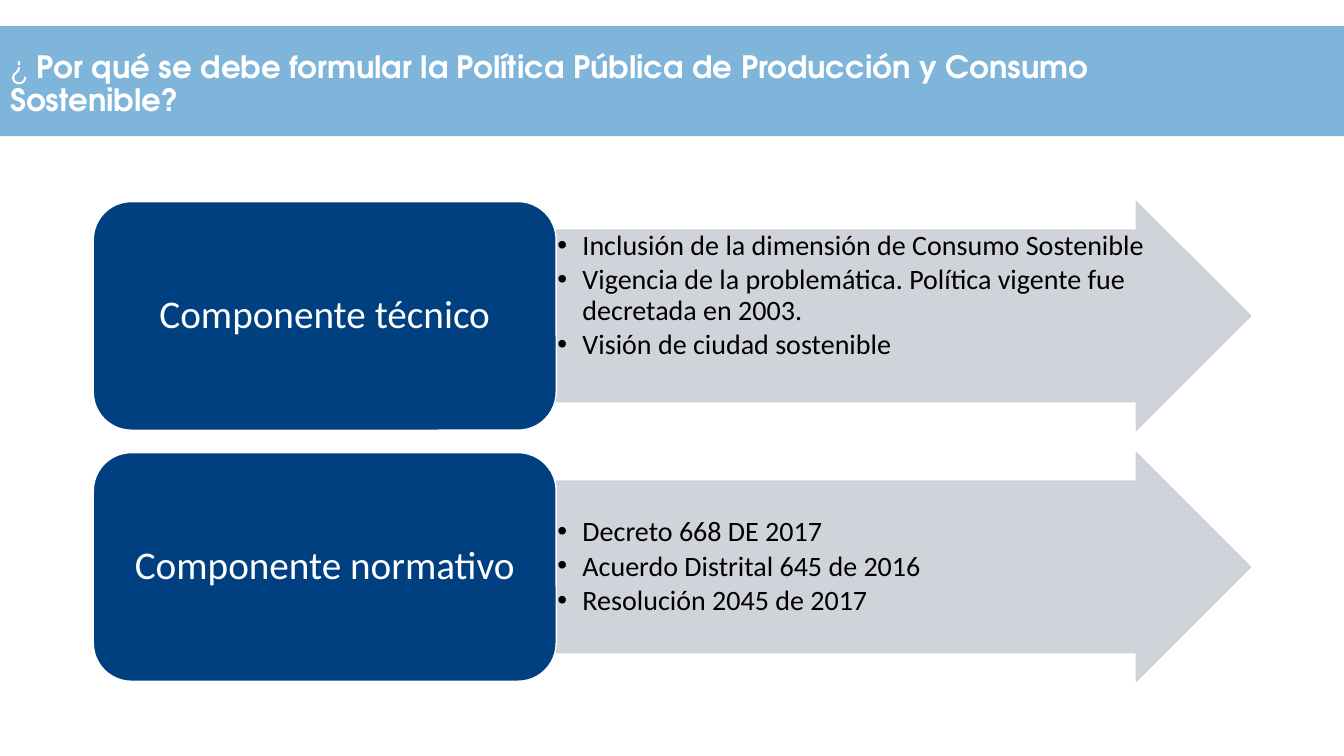
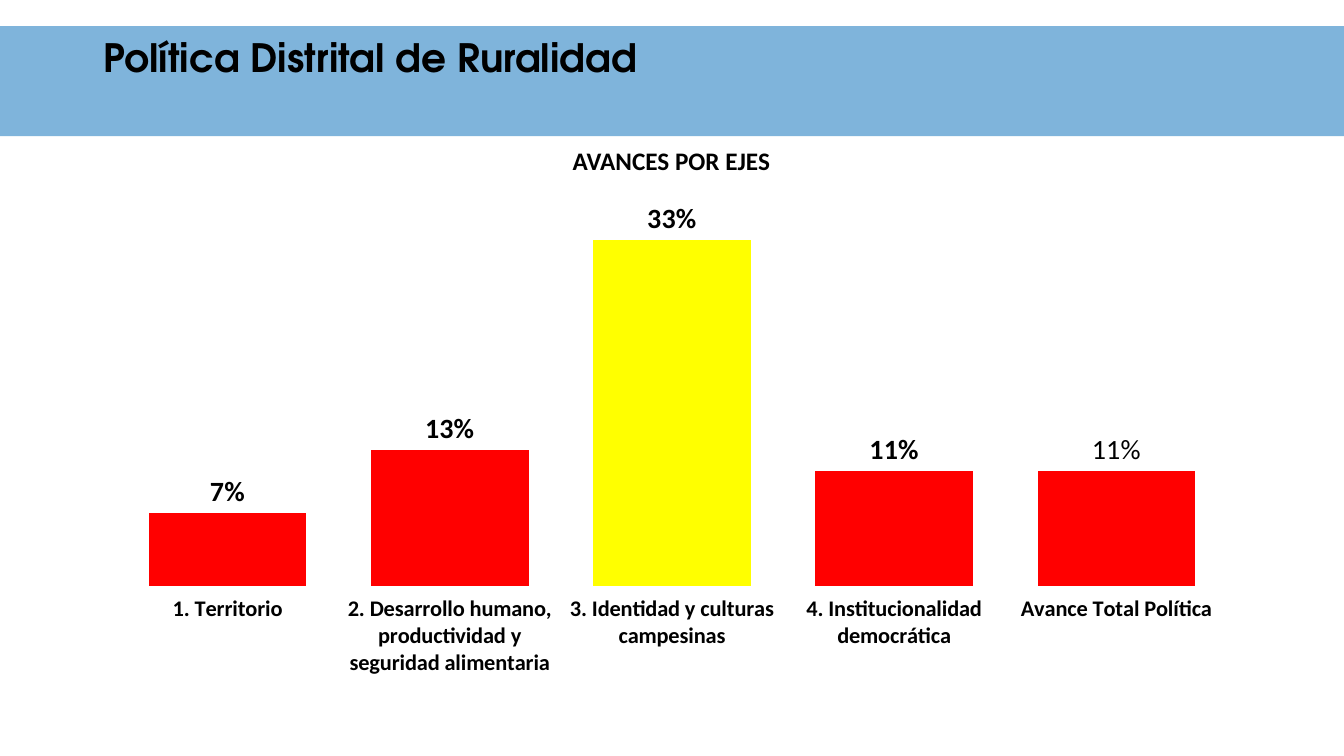
from lxml import etree
from pptx import Presentation
from pptx.chart.data import CategoryChartData
from pptx.dml.color import RGBColor
from pptx.enum.chart import XL_CHART_TYPE as ChartType
from pptx.enum.chart import XL_LABEL_POSITION as LabelPosition
from pptx.enum.chart import XL_TICK_LABEL_POSITION as TickLabels
from pptx.enum.chart import XL_TICK_MARK as TickMark
from pptx.enum.shapes import MSO_SHAPE as Preset
from pptx.enum.text import MSO_ANCHOR as Anchor
from pptx.enum.text import MSO_AUTO_SIZE as AutoSize
from pptx.enum.text import PP_ALIGN as Align
from pptx.oxml.ns import qn
from pptx.util import Inches, Pt

BAND_BLUE = RGBColor(0x1C, 0x7A, 0xBF)
NAVY = RGBColor(0x00, 0x40, 0x80)
ARROW_GRAY = RGBColor(0xCC, 0xCF, 0xD8)
RED = RGBColor(0xFF, 0x00, 0x00)
YELLOW = RGBColor(0xFF, 0xFF, 0x00)
BLACK = RGBColor(0x00, 0x00, 0x00)
WHITE = RGBColor(0xFF, 0xFF, 0xFF)

TITLE_FONT = "TeX Gyre Adventor"
BODY_FONT = "Calibri"
COLUMNS, ROWS = 144, 81
MARGIN = 10
CONTENT_WIDTH = COLUMNS - 2 * MARGIN
CONTENT_TOP = 21.6


def set_alpha(shape, percent):
    """Make every solid colour of the shape, fill and line, translucent."""
    for color in shape.element.spPr.iter(qn("a:srgbClr")):
        etree.SubElement(color, qn("a:alpha"), val=str(percent * 1000))


def style_font(font, size, color, bold=False, name=BODY_FONT):
    font.name, font.size, font.bold = name, Pt(size), bold
    font.color.rgb = color


class Slides:
    def __init__(self):
        self.deck = Presentation()
        self.deck.slide_width, self.deck.slide_height = Inches(13.33), Inches(7.5)
        self.layout = self.deck.slide_layouts[5]
        self.page = None

    def area(self, column, row, columns, rows):
        """Turn grid units into left, top, width and height."""
        unit_x = self.deck.slide_width / COLUMNS
        unit_y = self.deck.slide_height / ROWS
        return (int(column * unit_x), int(row * unit_y),
                int(columns * unit_x), int(rows * unit_y))

    def add_page(self):
        first = self.page is None
        self.page = self.deck.slides.add_slide(self.layout)
        if first:
            self.add_layout_band()

    def add_layout_band(self):
        """Draw the title band once and move it to the layout, behind its title."""
        band = self.shape(Preset.RECTANGLE, (0, 2.8, COLUMNS, 11.8), BAND_BLUE)
        set_alpha(band, 56)
        band.element.xpath(".//p:cNvPr")[0].set("id", "20")
        self.layout.placeholders[0].element.addprevious(band.element)

    def title(self, spans, area, size, color, anchor=Anchor.MIDDLE):
        """Fill the title with (text, bold) spans."""
        box = self.page.shapes.title
        box.left, box.top, box.width, box.height = self.area(*area)
        frame = box.text_frame
        frame.word_wrap, frame.auto_size = True, AutoSize.NONE
        frame.vertical_anchor = anchor
        para = frame.paragraphs[0]
        para.alignment, para.line_spacing = Align.LEFT, 0.9
        for text, bold in spans:
            span = para.add_run()
            span.text = text
            style_font(span.font, size, color, bold, TITLE_FONT)

    def shape(self, preset, area, fill, line=None):
        shape = self.page.shapes.add_shape(preset, *self.area(*area))
        shape.shadow.inherit = False
        shape.fill.solid()
        shape.fill.fore_color.rgb = fill
        if line is None:
            shape.line.fill.background()
        else:
            shape.line.color.rgb = line
            shape.line.width = Pt(1)
        return shape

    def arrow(self, items, area, anchor):
        arrow = self.shape(Preset.RIGHT_ARROW, area, ARROW_GRAY, ARROW_GRAY)
        arrow.adjustments[0], arrow.adjustments[1] = 0.75, 0.5
        set_alpha(arrow, 90)
        frame = arrow.text_frame
        frame.margin_left = frame.margin_right = Inches(0.01)
        frame.margin_top = frame.margin_bottom = Inches(0.01)
        frame.word_wrap, frame.vertical_anchor = True, anchor
        frame.text = "\n".join(items)
        for para in frame.paragraphs:
            para.alignment, para.line_spacing = Align.LEFT, 0.9
            para.space_after = Pt(3)
            properties = para._p.get_or_add_pPr()
            properties.set("marL", str(Inches(0.25)))
            properties.set("indent", str(Inches(-0.25)))
            etree.SubElement(properties, qn("a:buFont"), typeface="Arial")
            etree.SubElement(properties, qn("a:buChar"), char="•")
            style_font(para.font, 20, BLACK)

    def card(self, text, area):
        card = self.shape(Preset.ROUNDED_RECTANGLE, area, NAVY, WHITE)
        frame = card.text_frame
        frame.word_wrap, frame.vertical_anchor = True, Anchor.MIDDLE
        frame.text = text
        para = frame.paragraphs[0]
        para.alignment, para.line_spacing = Align.CENTER, 0.9
        style_font(para.runs[0].font, 28, WHITE)

    def heading(self, text, area):
        box = self.page.shapes.add_textbox(*self.area(*area))
        frame = box.text_frame
        frame.word_wrap, frame.auto_size = False, AutoSize.SHAPE_TO_FIT_TEXT
        frame.text = text
        style_font(frame.paragraphs[0].runs[0].font, 18, BLACK, bold=True)

    def column_chart(self, progress, area, highlight, plain_label):
        """Chart the progress; one column stands out, one label is not bold."""
        data = CategoryChartData(number_format="0%")
        data.categories = list(progress)
        data.add_series("Series 1", list(progress.values()))
        chart = self.page.shapes.add_chart(
            ChartType.COLUMN_CLUSTERED, *self.area(*area), data).chart
        chart.has_legend = chart.has_title = False
        style_font(chart.font, 10, NAVY)

        values = chart.value_axis
        values.minimum_scale, values.maximum_scale = 0, 0.35
        values.has_major_gridlines = values.visible = False
        categories = chart.category_axis
        categories.major_tick_mark = TickMark.NONE
        categories.tick_label_position = TickLabels.LOW
        categories.format.line.fill.background()
        style_font(categories.tick_labels.font, 16, BLACK, bold=True)

        plot = chart.plots[0]
        plot.gap_width, plot.vary_by_categories = 41, False
        series = plot.series[0]
        for bars, color in ((series, RED), (series.points[highlight], YELLOW)):
            bars.format.fill.solid()
            bars.format.fill.fore_color.rgb = color
        labels = series.data_labels
        labels.show_value, labels.number_format = True, "0%"
        labels.number_format_is_linked = False
        labels.position = LabelPosition.OUTSIDE_END
        style_font(labels.font, 20, BLACK, bold=True)
        label = series.points[plain_label].data_label
        style_font(label.font, 20, BLACK)
        label.position = LabelPosition.OUTSIDE_END
        self.place_plot(chart, x=0.02, y=0.03, w=0.96, h=0.77)

    @staticmethod
    def place_plot(chart, **shares):
        """Fix the inner plot area, in shares of the chart's size."""
        plot_area = chart.element.find(".//" + qn("c:plotArea"))
        layout = plot_area.find(qn("c:layout"))
        if layout is None:
            layout = etree.Element(qn("c:layout"))
            plot_area.insert(0, layout)
        manual = etree.SubElement(layout, qn("c:manualLayout"))
        settings = {"layoutTarget": "inner", "xMode": "edge", "yMode": "edge", **shares}
        for tag, value in settings.items():
            etree.SubElement(manual, qn("c:" + tag), val=str(value))


def add_reasons(slides):
    slides.add_page()
    slides.title(
        [("¿ ", False),
         ("Por qué se debe formular la Política Pública de Producción y Consumo "
          "Sostenible?", True)],
        (0, 4, 129.3, 10.2), 22, WHITE)
    components = [
        ("Componente técnico", Anchor.TOP,
         ["Inclusión de la dimensión de Consumo Sostenible",
          "Vigencia de la problemática. Política vigente fue decretada en 2003.",
          "Visión de ciudad sostenible"]),
        ("Componente normativo", Anchor.MIDDLE,
         ["Decreto 668 DE 2017",
          "Acuerdo Distrital 645 de 2016",
          "Resolución 2045 de 2017"]),
    ]
    height, gap = 24.5, 2.4
    card_width = 0.4 * CONTENT_WIDTH
    for index, (name, anchor, items) in enumerate(components):
        top = CONTENT_TOP + index * (height + gap)
        slides.arrow(items, (MARGIN + card_width, top,
                             CONTENT_WIDTH - card_width, height), anchor)
        slides.card(name, (MARGIN, top, card_width, height))


def add_progress(slides):
    slides.add_page()
    slides.title([("Política Distrital de Ruralidad", True)],
                 (MARGIN, 3.6, CONTENT_WIDTH, 8.5), 27.9, BLACK, Anchor.TOP)
    progress = {
        "1. Territorio": 0.07,
        "2. Desarrollo humano, productividad y seguridad alimentaria": 0.13,
        "3. Identidad y culturas campesinas": 0.33,
        "4. Institucionalidad democrática": 0.11,
        "Avance Total Política": 0.11,
    }
    slides.column_chart(progress, (MARGIN, CONTENT_TOP, CONTENT_WIDTH, 51.4),
                        highlight=2, plain_label=4)
    slides.heading("AVANCES POR EJES", (60.3, 15, 23.5, 4.3))


def main():
    slides = Slides()
    add_reasons(slides)
    add_progress(slides)
    slides.deck.save("out.pptx")


if __name__ == "__main__":
    main()
